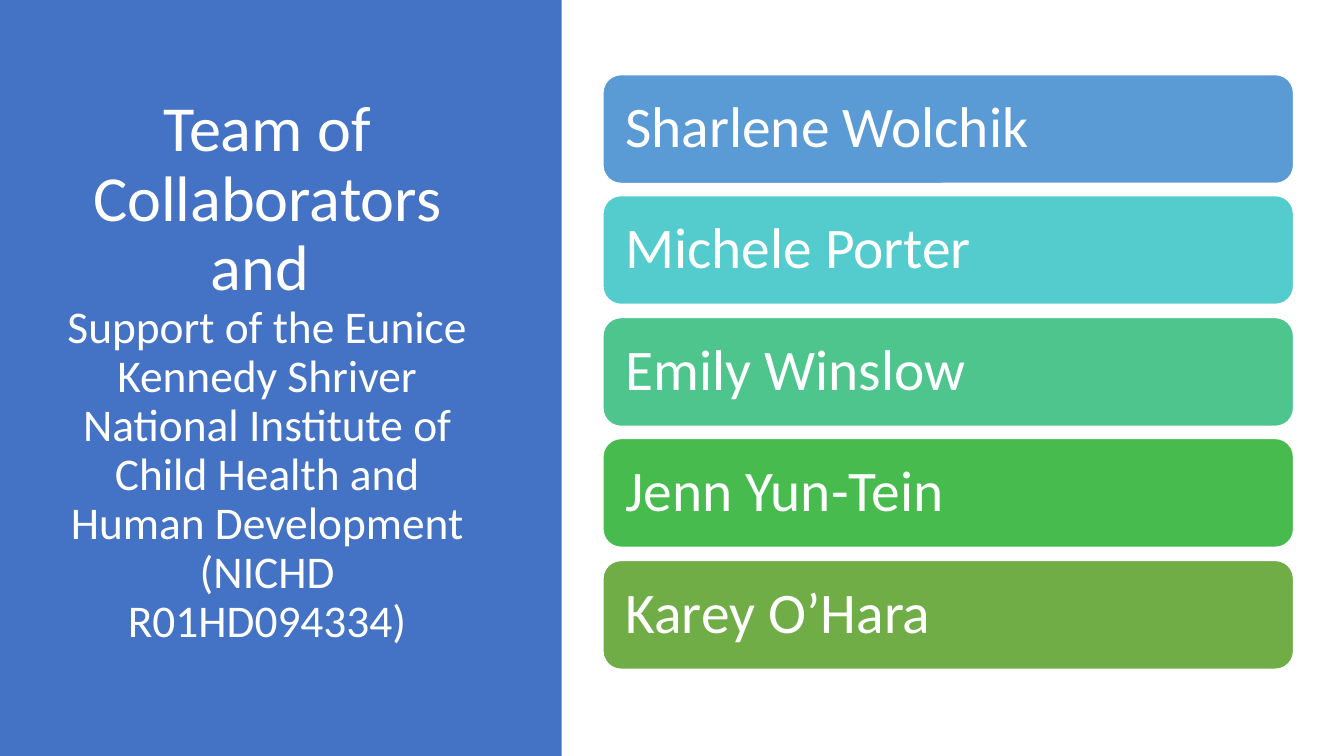
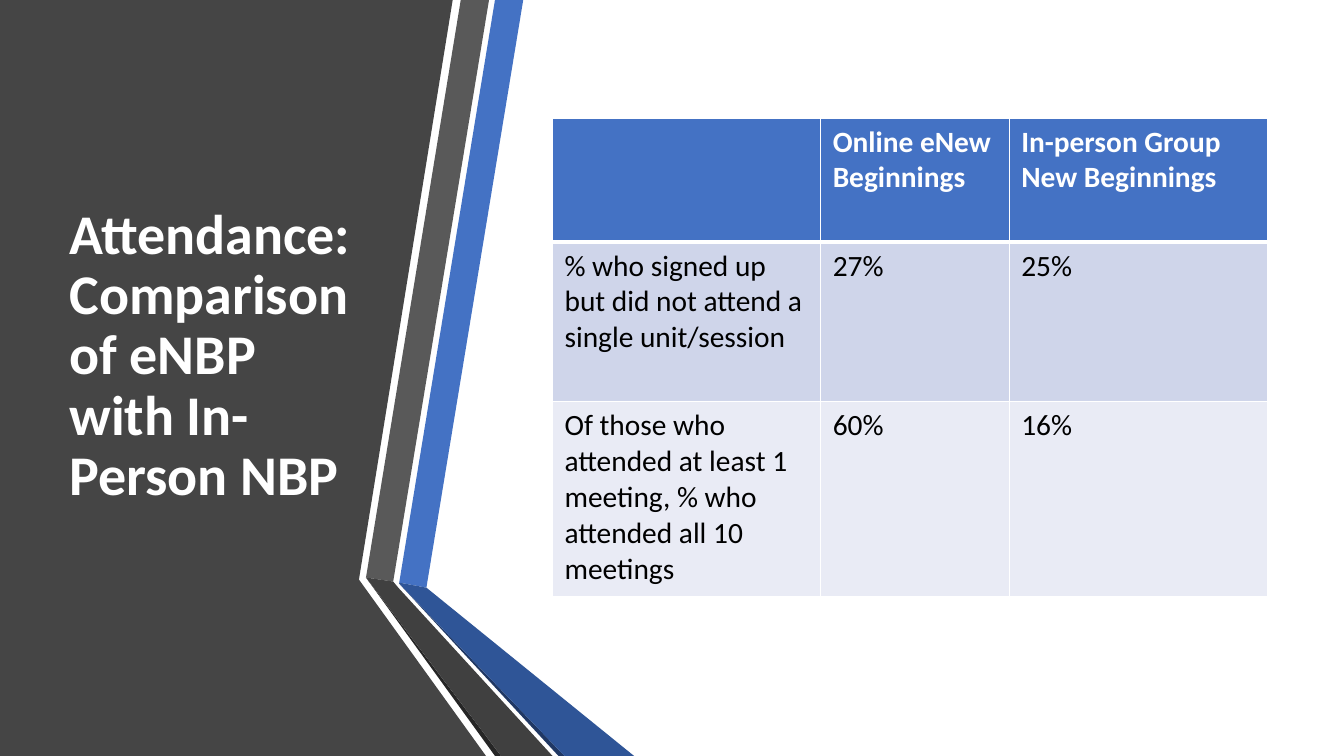
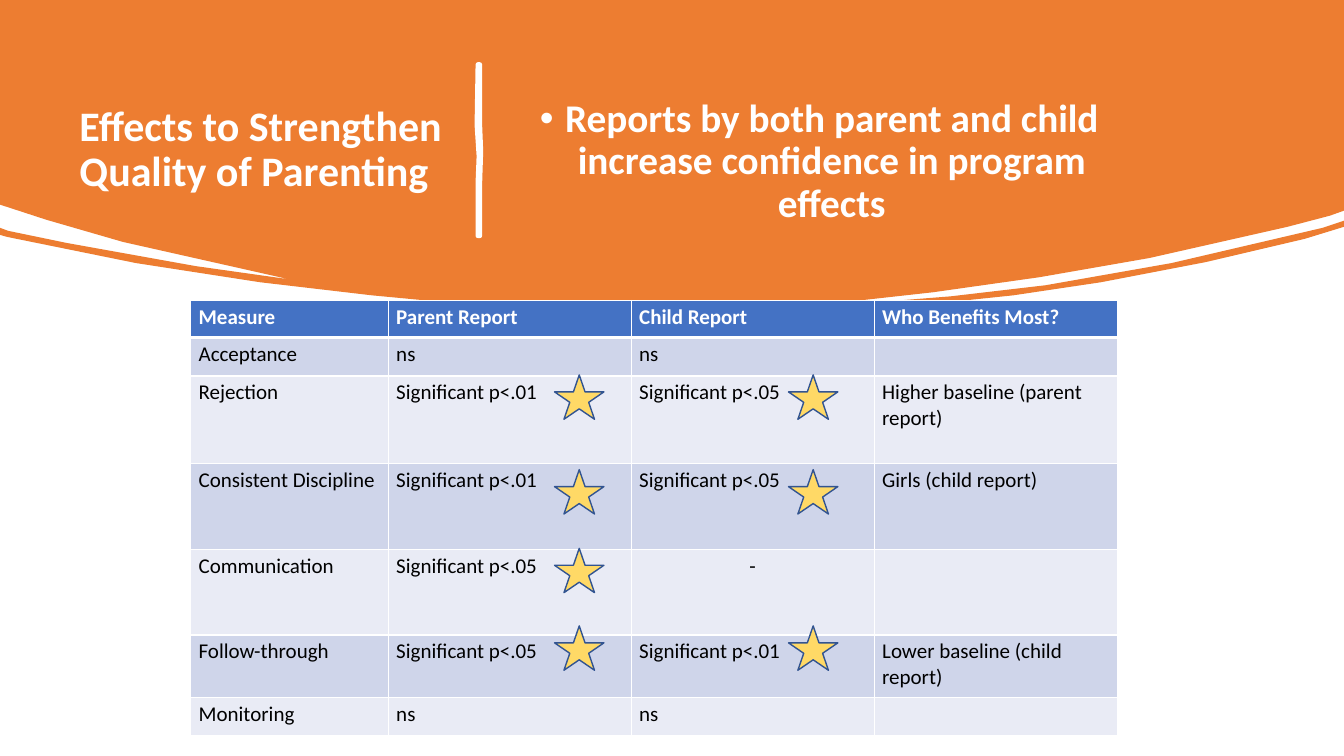
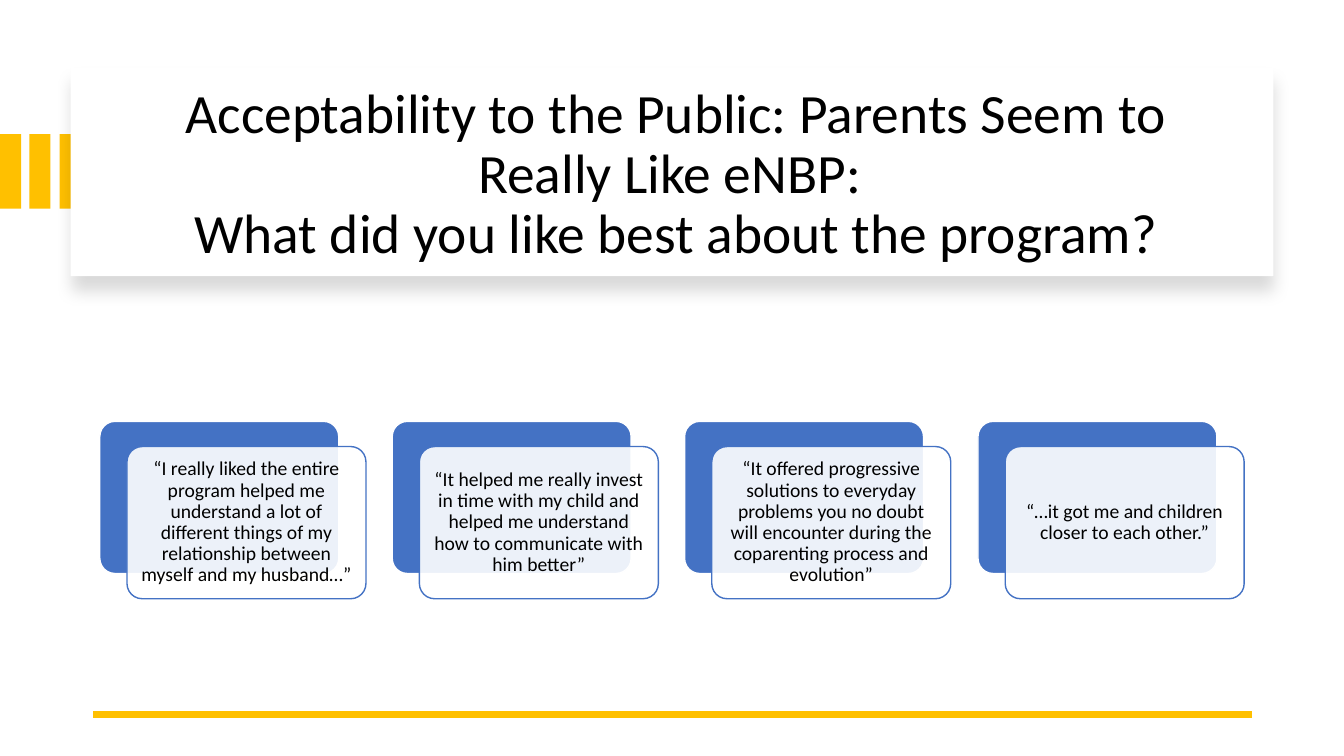
from pptx import Presentation
from pptx.dml.color import RGBColor as RGB
from pptx.enum.shapes import MSO_CONNECTOR as Connector, MSO_SHAPE as Shape
from pptx.enum.text import MSO_ANCHOR as Anchor, PP_ALIGN as Align
from pptx.oxml.ns import qn
from pptx.util import Pt
from lxml.etree import SubElement

PX = 9144
FONT = "Calibri"
WHITE = RGB(0xFF, 0xFF, 0xFF)
BLACK = RGB(0x00, 0x00, 0x00)
BLUE = RGB(0x44, 0x72, 0xC4)
DEEP_BLUE = RGB(0x2F, 0x55, 0x97)
NAVY = RGB(0x20, 0x38, 0x64)
SKY = RGB(0x5B, 0x9B, 0xD5)
TEAL = RGB(0x54, 0xCC, 0xCD)
MINT = RGB(0x4D, 0xC5, 0x8D)
GREEN = RGB(0x48, 0xBB, 0x4F)
OLIVE = RGB(0x70, 0xAD, 0x47)
CHARCOAL = RGB(0x45, 0x45, 0x45)
GREY = RGB(0x59, 0x59, 0x59)
DARK_GREY = RGB(0x40, 0x40, 0x40)
SOOT = RGB(0x26, 0x26, 0x26)
ORANGE = RGB(0xED, 0x7D, 0x31)
GOLD = RGB(0xFF, 0xC0, 0x00)
STAR_FILL = RGB(0xFF, 0xD9, 0x66)
STAR_EDGE = RGB(0x32, 0x54, 0x91)
ROW_FILLS = (RGB(0xCF, 0xD5, 0xEA), RGB(0xE9, 0xEB, 0xF5))


class Deck:
    def __init__(self, width, height):
        self.presentation = Presentation()
        self.presentation.slide_width = width * PX
        self.presentation.slide_height = height * PX
        self.slide = None

    def new_slide(self):
        self.slide = self.presentation.slides.add_slide(self.presentation.slide_layouts[6])

    def box(self, *bounds):
        return [length * PX for length in bounds]

    def paint(self, shape, fill, edge=None, weight=1):
        shape.shadow.inherit = False
        shape.fill.solid()
        shape.fill.fore_color.rgb = fill
        if edge is None:
            shape.line.fill.background()
        else:
            shape.line.color.rgb = edge
            shape.line.width = Pt(weight)
        return shape

    def shape(self, kind, bounds, fill, edge=None, rounding=None):
        shape = self.slide.shapes.add_shape(kind, *self.box(*bounds))
        if rounding is not None:
            shape.adjustments[0] = rounding
        return self.paint(shape, fill, edge)

    def outline(self, points, fill, edge=None, weight=1):
        builder = self.slide.shapes.build_freeform(*points[0], scale=PX)
        builder.add_line_segments(points[1:], close=True)
        return self.paint(builder.convert_to_shape(), fill, edge, weight)

    def style_run(self, run, size, color, bold=False):
        run.font.name = FONT
        run.font.size = Pt(size)
        run.font.bold = bold
        run.font.color.rgb = color

    def set_text(self, shape, text, size, color, bold=False, align=Align.LEFT,
                 anchor=Anchor.MIDDLE, inset=None):
        frame = shape.text_frame
        frame.word_wrap = True
        frame.vertical_anchor = anchor
        if inset is not None:
            frame.margin_left = frame.margin_right = inset * PX
            frame.margin_top = frame.margin_bottom = inset * PX
        paragraph = frame.paragraphs[0]
        paragraph.text = text
        paragraph.alignment = align
        paragraph.line_spacing = 0.9
        for run in paragraph.runs:
            self.style_run(run, size, color, bold)
        return paragraph

    def text(self, bounds, *content, **style):
        return self.set_text(self.slide.shapes.add_textbox(*self.box(*bounds)), *content, **style)

    def bullet(self, paragraph, margin, hanging):
        properties = paragraph._p.get_or_add_pPr()
        properties.set("marL", str(margin * PX))
        properties.set("indent", str(-hanging * PX))
        SubElement(properties, qn("a:buFont"), typeface="Arial")
        SubElement(properties, qn("a:buChar"), char="•")

    def rule(self, start, end, color, weight):
        rule = self.slide.shapes.add_connector(Connector.STRAIGHT, *self.box(*start, *end))
        rule.line.color.rgb = color
        rule.line.width = Pt(weight)
        SubElement(rule._element.spPr, qn("a:effectLst"))

    def cast_shadow(self, shape, blur, distance, opacity):
        effects = shape._element.spPr.find(qn("a:effectLst"))
        shadow = SubElement(effects, qn("a:outerShdw"), blurRad=str(Pt(blur)),
                            dist=str(Pt(distance)), dir="5400000", algn="t", rotWithShape="0")
        color = SubElement(shadow, qn("a:srgbClr"), val=str(BLACK))
        SubElement(color, qn("a:alpha"), val=str(opacity * 1000))

    def set_opacity(self, shape, opacity):
        color = shape._element.spPr.find(qn("a:solidFill")).find(qn("a:srgbClr"))
        SubElement(color, qn("a:alpha"), val=str(opacity * 1000))

    def border(self, cell, side, weight):
        line = SubElement(cell._tc.get_or_add_tcPr(), qn("a:" + side), w=str(Pt(weight)))
        SubElement(SubElement(line, qn("a:solidFill")), qn("a:srgbClr"), val=str(WHITE))

    def table(self, corner, widths, heights, rows, size, inset, centred=()):
        bounds = self.box(*corner, sum(widths), sum(heights))
        table = self.slide.shapes.add_table(len(rows), len(widths), *bounds).table
        for column, width in zip(table.columns, widths):
            column.width = width * PX
        for r, (row, height) in enumerate(zip(rows, heights)):
            table.rows[r].height = height * PX
            for c, value in enumerate(row):
                cell = table.cell(r, c)
                cell.margin_left = cell.margin_right = inset * PX
                cell.margin_top = cell.margin_bottom = inset * PX // 2
                for side in ("lnL", "lnR", "lnT", "lnB"):
                    heavy = (r == 0 and side == "lnB") or (r == 1 and side == "lnT")
                    self.border(cell, side, 3 if heavy else 1)
                cell.fill.solid()
                cell.fill.fore_color.rgb = ROW_FILLS[(r - 1) % 2] if r else BLUE
                paragraph = cell.text_frame.paragraphs[0]
                if value in centred:
                    paragraph.alignment = Align.CENTER
                run = paragraph.add_run()
                run.text = value
                self.style_run(run, size, BLACK if r else WHITE, r == 0)


def build_team(deck):
    deck.new_slide()
    deck.shape(Shape.RECTANGLE, (0, 0, 557, 750), BLUE)
    title = deck.text(
        (57, 68, 416, 602),
        "Team of Collaborators\vand \vSupport of the Eunice Kennedy Shriver National Institute "
        "of Child Health and Human Development (NICHD R01HD094334)",
        45.9, WHITE, align=Align.CENTER)
    title.runs[-1].font.size = Pt(32.4)
    members = (("Sharlene Wolchik", SKY), ("Michele Porter", TEAL), ("Emily Winslow", MINT),
               ("Jenn Yun-Tein", GREEN), ("Karey O’Hara", OLIVE))
    for i, (member, color) in enumerate(members):
        card = deck.shape(Shape.ROUNDED_RECTANGLE, (598, 74 + 241 * i // 2, 685, 108), color, WHITE)
        deck.set_text(card, member, 41, WHITE, inset=17)


def build_attendance(deck):
    deck.new_slide()
    ribbons = (
        (CHARCOAL, [(0, 0), (449, 0), (356, 575), (482, 750), (0, 750)]),
        (BLUE, [(396, 578), (423, 583), (519, 0), (491, 0)]),
        (GREY, [(485, 0), (457, 0), (363, 573), (390, 577)]),
        (SOOT, [(363, 573), (491, 750), (497, 750)]),
        (NAVY, [(396, 579), (554, 750), (560, 750)]),
        (DEEP_BLUE, [(396, 579), (560, 750), (629, 750), (423, 583), (396, 578)]),
        (DARK_GREY, [(548, 750), (395, 583), (390, 577), (363, 573), (497, 750)]),
    )
    for color, points in ribbons:
        deck.outline(points, color)
    deck.text((59, 75, 304, 558), "Attendance: Comparison of eNBP with In-Person NBP",
              40, WHITE, bold=True)
    rows = (
        ("", "Online eNew Beginnings", "In-person Group New Beginnings"),
        ("% who signed up but did not attend a single unit/session", "27%", "25%"),
        ("Of those who attended at least 1 meeting, % who attended all 10 meetings", "60%", "16%"),
    )
    deck.table((548, 117), (266, 187, 256), (123, 158, 194), rows, 21, 12)


def build_effects(deck):
    deck.new_slide()
    band = [
        (0, 0), (1333, 0), (1333, 209), (1319, 214), (1277, 225), (1140, 256), (1031, 275),
        (925, 290), (844, 299), (760, 306), (743, 307), (753, 307), (829, 303), (943, 294),
        (1037, 283), (1162, 261), (1312, 226), (1333, 219), (1333, 225), (1294, 237),
        (1196, 260), (1092, 280), (1005, 293), (938, 300), (860, 307), (758, 313), (708, 314),
        (696, 315), (662, 315), (576, 310), (475, 303), (369, 293), (258, 280), (135, 261),
        (7, 235), (0, 233), (0, 226), (8, 229), (66, 241), (194, 264), (286, 277), (282, 276),
        (122, 240), (46, 218), (0, 203),
    ]
    deck.outline(band, ORANGE)
    deck.text((69, 69, 394, 160), "Effects to Strengthen Quality of Parenting",
              30, WHITE, bold=True)
    divider = [(476, 64), (476, 124), (477, 150), (476, 182), (476, 234), (474, 234),
               (474, 181), (475, 155), (473, 124), (474, 64)]
    deck.outline(divider, WHITE, WHITE, 3.25)
    rows = (
        ("Measure", "Parent Report", "Child Report", "Who Benefits Most?"),
        ("Acceptance", "ns", "ns", ""),
        ("Rejection", "Significant p<.01", "Significant p<.05", "Higher baseline (parent report)"),
        ("Consistent Discipline", "Significant p<.01", "Significant p<.05", "Girls (child report)"),
        ("Communication", "Significant p<.05", "-", ""),
        ("Follow-through", "Significant p<.05", "Significant p<.01", "Lower baseline (child report)"),
        ("Monitoring", "ns", "ns", ""),
    )
    deck.table((189, 298), (196, 241, 241, 241), (37, 37, 87, 85, 85, 62, 37), rows, 15, 8,
               centred=("-",))
    parent, child = 550, 782
    for top, reports in ((372, (parent, child)), (466, (parent, child)),
                         (544, (parent,)), (621, (parent, child))):
        for left in reports:
            deck.shape(Shape.STAR_5_POINT, (left, top, 49, 44), STAR_FILL, STAR_EDGE)
    summary = deck.text(
        (476, 93, 667, 137),
        "Reports by both parent and child increase confidence in program effects",
        28, WHITE, bold=True, align=Align.CENTER, anchor=Anchor.TOP)
    summary.space_after = Pt(6)
    deck.bullet(summary, 31, 25)


def build_acceptability(deck):
    deck.new_slide()
    for i in range(3):
        deck.shape(Shape.RECTANGLE, (59 * i // 2, 133, 21, 74), GOLD)
    banner = deck.shape(Shape.RECTANGLE, (70, 67, 1193, 207), WHITE)
    deck.cast_shadow(banner, 11, 10, 15)
    deck.text(
        (114, 89, 1113, 170),
        "Acceptability to the Public: Parents Seem to Really Like eNBP: \v"
        "What did you like best about the program?",
        39.6, BLACK, align=Align.CENTER)
    deck.rule((1242, 709), (92, 709), GOLD, 4.5)
    quotes = (
        "“I really liked the entire program helped me understand a lot of different things "
        "of my relationship between myself and my husband…”",
        "“It helped me really invest in time with my child and helped me understand how to "
        "communicate with him better”",
        "“It offered progressive solutions to everyday problems you no doubt will encounter "
        "during the coparenting process and evolution”",
        "“…it got me and children closer to each other.”",
    )
    for i, quote in enumerate(quotes):
        left = 99 + 871 * i // 3
        deck.shape(Shape.ROUNDED_RECTANGLE, (left, 418, 237, 151), BLUE, WHITE, 0.1)
        card = deck.shape(Shape.ROUNDED_RECTANGLE, (left + 27, 443, 237, 151), WHITE, BLUE, 0.1)
        deck.set_opacity(card, 90)
        deck.set_text(card, quote, 14, BLACK, align=Align.CENTER, inset=6)


def main():
    deck = Deck(1333, 750)
    build_team(deck)
    build_attendance(deck)
    build_effects(deck)
    build_acceptability(deck)
    deck.presentation.save("out.pptx")


if __name__ == "__main__":
    main()
